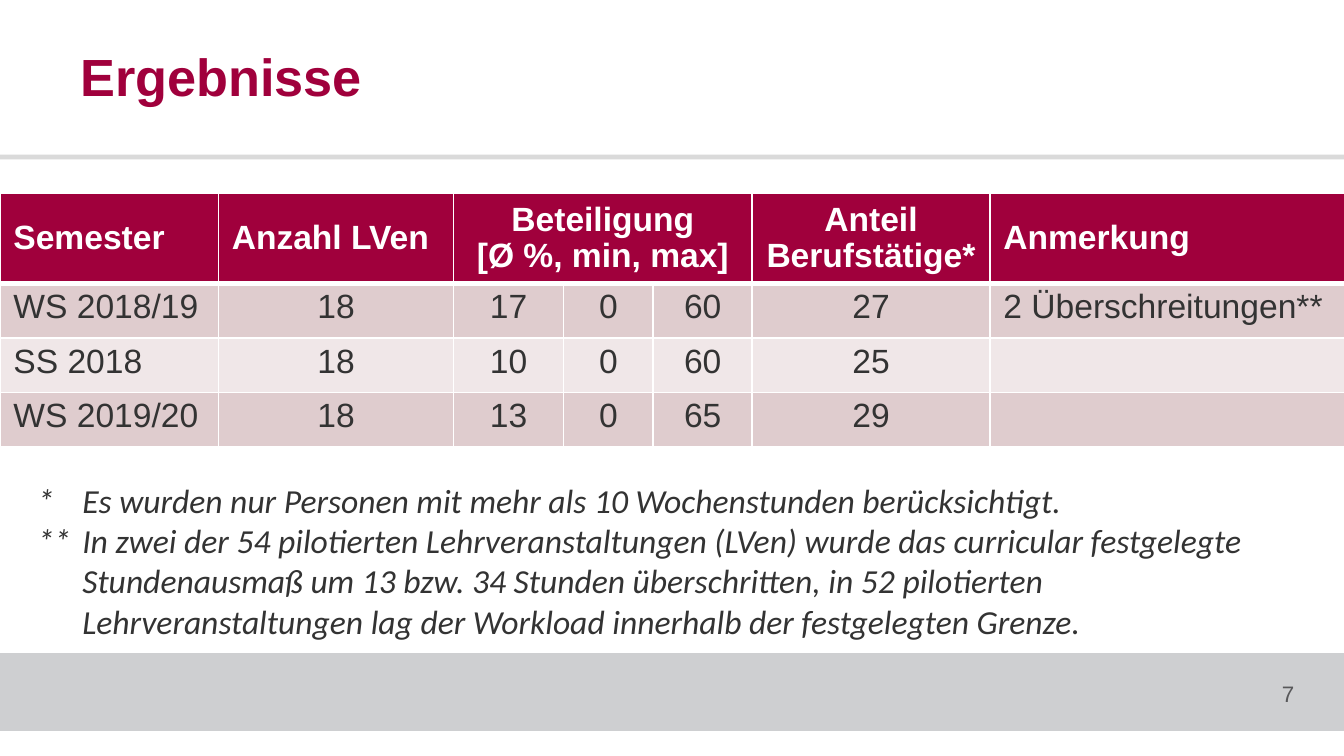
from lxml import etree
from pptx import Presentation, util as u
from pptx.dml.color import RGBColor
from pptx.enum import shapes, text
from pptx.oxml.ns import qn

Pt = u.Pt
LEFT, CENTER, RIGHT = text.PP_ALIGN.LEFT, text.PP_ALIGN.CENTER, text.PP_ALIGN.RIGHT
TOP, MIDDLE = text.MSO_ANCHOR.TOP, text.MSO_ANCHOR.MIDDLE
CRIMSON, DARK, WHITE = "A0003C", "333333", "FFFFFF"


def color(value):
    return RGBColor.from_string(value)


def write(frame, content, size=18, font="Arial", fill=DARK, bold=False,
          italic=False, align=LEFT, spacing=None, hanging=0):
    """Write one paragraph per line of content; a vertical tab breaks a line."""
    frame.word_wrap = True
    for index, line in enumerate(content.split("\n")):
        paragraph = frame.add_paragraph() if index else frame.paragraphs[0]
        paragraph.text = line
        paragraph.alignment = align
        if spacing:
            paragraph.line_spacing = spacing
        if hanging:
            properties = paragraph._p.get_or_add_pPr()
            properties.set("marL", str(Pt(hanging)))
            properties.set("indent", str(-Pt(hanging)))
        for run in paragraph.runs:
            run.font.size = Pt(size)
            run.font.name = font
            run.font.bold = bold
            run.font.italic = italic
            run.font.color.rgb = color(fill)


presentation = Presentation()
presentation.slide_width = Pt(720)
presentation.slide_height = Pt(405)
slide = presentation.slides.add_slide(presentation.slide_layouts[6])

# Footer band and rule below the title
for top, height, fill in [(350, 41.6, "CECFD1"), (82.8, 2.6, "DADADA")]:
    band = slide.shapes.add_shape(shapes.MSO_SHAPE.RECTANGLE,
                                  0, Pt(top), Pt(720), Pt(height))
    band.shadow.inherit = False
    band.fill.solid()
    band.fill.fore_color.rgb = color(fill)
    band.line.fill.background()

# Title
title = slide.shapes.add_textbox(Pt(36), Pt(19.5), Pt(466), Pt(42.5)).text_frame
title.vertical_anchor = MIDDLE
write(title, "Ergebnisse", size=28, fill=CRIMSON, bold=True)

# Results table
rows = [
    ["Semester", "Anzahl LVen", "Beteiligung\n[Ø %, min, max]", "", "",
     "Anteil\vBerufstätige*", "Anmerkung"],
    ["WS 2018/19", "18", "17", "0", "60", "27", "2 Überschreitungen**"],
    ["SS 2018", "18", "10", "0", "60", "25", ""],
    ["WS 2019/20", "18", "13", "0", "65", "29", ""],
]
column_widths = [117, 126, 59, 48, 53, 127.4, 192.6]
row_heights = [46.5, 29.2, 29.2, 29.2]
row_fills = [CRIMSON, "DFCCCE", "F0E7E8", "DFCCCE"]
table = slide.shapes.add_table(len(rows), len(column_widths), 0, Pt(103.7),
                               Pt(sum(column_widths)), Pt(sum(row_heights))).table
for column, width in zip(table.columns, column_widths):
    column.width = Pt(width)

for r, values in enumerate(rows):
    table.rows[r].height = Pt(row_heights[r])
    header = r == 0
    for c, value in enumerate(values):
        cell = table.cell(r, c)
        cell.vertical_anchor = MIDDLE if header else TOP
        # White borders, heavier between header and body
        for side in ("lnL", "lnR", "lnT", "lnB"):
            heavy = (r, side) in [(0, "lnB"), (1, "lnT")]
            border = etree.SubElement(cell._tc.get_or_add_tcPr(), qn(f"a:{side}"),
                                      w=str(Pt(3 if heavy else 1)))
            solid = etree.SubElement(border, qn("a:solidFill"))
            etree.SubElement(solid, qn("a:srgbClr"), val=WHITE)
        cell.fill.solid()
        cell.fill.fore_color.rgb = color(row_fills[r])
        centered = c in (2, 5) if header else 0 < c < 6
        write(cell.text_frame, value, fill=WHITE if header else DARK, bold=header,
              align=CENTER if centered else LEFT, spacing=0.95)
        if not value:
            cell.text_frame.paragraphs[0].font.size = Pt(18)
table.cell(0, 2).merge(table.cell(0, 4))

# Slide number
number = slide.shapes.add_textbox(Pt(649.4), Pt(361), Pt(44), Pt(21.6)).text_frame
number.margin_left = number.margin_right = 0
number.vertical_anchor = MIDDLE
write(number, "7", size=12, fill="58585A", align=RIGHT)

# Footnotes
notes = slide.shapes.add_textbox(Pt(13), Pt(253.5), Pt(686), Pt(94.5)).text_frame
write(notes,
      "*\tEs wurden nur Personen mit mehr als 10 Wochenstunden berücksichtigt.\n"
      "**\tIn zwei der 54 pilotierten Lehrveranstaltungen (LVen) wurde das "
      "curricular festgelegte\v"
      "Stundenausmaß um 13 bzw. 34 Stunden überschritten, in 52 pilotierten\v"
      "Lehrveranstaltungen lag der Workload innerhalb der festgelegten Grenze.",
      font="Calibri", italic=True, hanging=24)

presentation.save("out.pptx")
